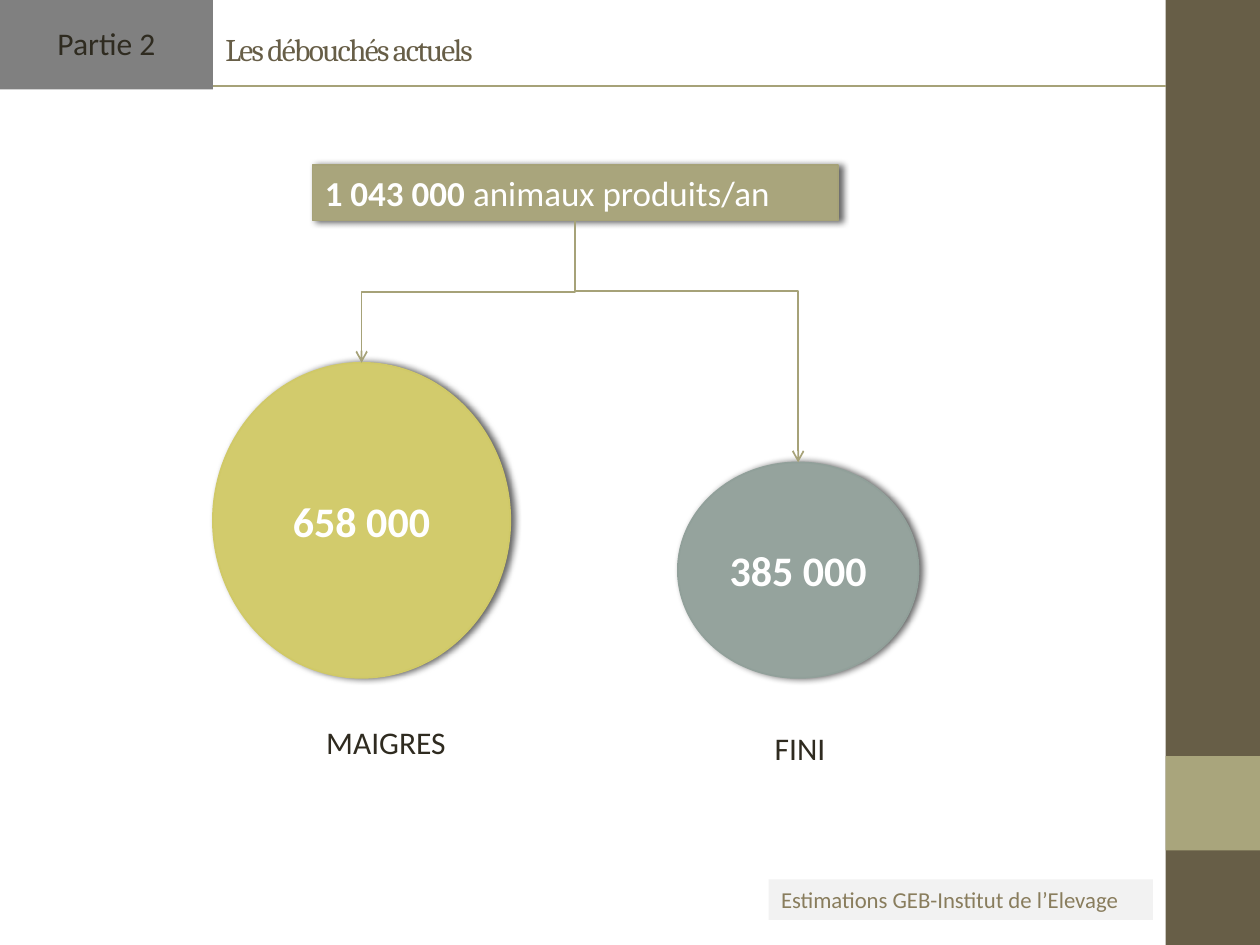
from lxml.etree import SubElement
from pptx import Presentation
from pptx.dml.color import RGBColor
from pptx.enum.shapes import MSO_CONNECTOR as LINK, MSO_SHAPE as SHAPE
from pptx.enum.text import MSO_ANCHOR as ANCHOR, PP_ALIGN as ALIGN
from pptx.oxml.ns import qn
from pptx.util import Inches, Pt

COLORS = {
    "brown": "675E47", "khaki": "A9A57C", "outline": "A6A278",
    "pale": "F2F2F2", "tan": "897D5D", "gray": "808080", "ink": "2F2B20",
    "yellow": "D2CB6C", "yellow_edge": "D0C967",
    "sage": "95A39D", "sage_edge": "91A09A",
    "white": "FFFFFF", "black": "000000",
}


def rgb(name):
    return RGBColor.from_string(COLORS[name])


def write(shape, *runs, size=18, color="ink", font="Calibri", bold=(),
          align=ALIGN.LEFT, anchor=ANCHOR.TOP, wrap=True, spacing=None):
    frame = shape.text_frame
    frame.word_wrap = wrap
    frame.vertical_anchor = anchor
    paragraph = frame.paragraphs[0]
    paragraph.alignment = align
    for text in runs:
        run = paragraph.add_run()
        run.text = text
        run.font.size = Pt(size)
        run.font.name = font
        run.font.bold = text in bold
        run.font.color.rgb = rgb(color)
        if spacing is not None:
            run.font._element.set("spc", str(spacing * 100))


class Board:
    def __init__(self, slide, line_color="outline", line_width=1):
        self.shapes = slide.shapes
        self.line_color = line_color
        self.line_width = Pt(line_width)

    def block(self, x, y, w, h, fill, edge=None, kind=SHAPE.RECTANGLE):
        shape = self.shapes.add_shape(
            kind, Inches(x), Inches(y), Inches(w), Inches(h))
        shape.fill.solid()
        shape.fill.fore_color.rgb = rgb(fill)
        shape.shadow.inherit = False
        if edge:
            shape.line.color.rgb = rgb(edge)
            shape.line.width = self.line_width
            self.cast_shadow(shape)
        else:
            shape.line.fill.background()
        return shape

    def cast_shadow(self, shape):
        effects = shape._element.spPr.find(qn("a:effectLst"))
        shadow = SubElement(effects, qn("a:outerShdw"), blurRad=str(Pt(4)),
                            dist=str(Pt(2)), dir="0", rotWithShape="0")
        tint = SubElement(shadow, qn("a:srgbClr"), val=COLORS["black"])
        SubElement(tint, qn("a:alpha"), val="60000")

    def label(self, x, y, w, h, text, **style):
        box = self.shapes.add_textbox(
            Inches(x), Inches(y), Inches(w), Inches(h))
        write(box, text, **style)

    def line(self, x1, y1, x2, y2, kind=LINK.STRAIGHT):
        link = self.shapes.add_connector(
            kind, Inches(x1), Inches(y1), Inches(x2), Inches(y2))
        link.line.color.rgb = rgb(self.line_color)
        link.line.width = self.line_width
        SubElement(link._element.spPr, qn("a:effectLst"))
        return link

    def branch(self, source, target, bend):
        link = self.line(0, 0, 1, 1, LINK.ELBOW)
        link.begin_connect(source, 2)
        link.end_connect(target, 0)
        x1, y1 = source.left + source.width // 2, source.top + source.height
        x2, y2 = target.left + target.width // 2, target.top
        link.width, link.height = y2 - y1, abs(x2 - x1)
        link.left = (x1 + x2 - link.width) // 2
        link.top = (y1 + y2 - link.height) // 2
        properties = link._element.spPr
        frame = properties.find(qn("a:xfrm"))
        rightward = x2 > x1
        frame.set("rot", "16200000" if rightward else "5400000")
        frame.set("flipH", "1" if rightward else "0")
        frame.set("flipV", "0")
        guides = properties.find(qn("a:prstGeom")).find(qn("a:avLst"))
        SubElement(guides, qn("a:gd"), name="adj1",
                   fmla=f"val {round(bend * 100000)}")
        SubElement(link.line._get_or_add_ln(), qn("a:tailEnd"), type="arrow")


def main():
    deck = Presentation()
    deck.slide_width, deck.slide_height = Inches(10), Inches(7.5)
    board = Board(deck.slides.add_slide(deck.slide_layouts[6]))

    board.block(9.25, 0, 0.75, 7.5, "brown")
    board.block(9.25, 6, 0.75, 0.75, "khaki")
    board.label(1.69, 0.13, 7.72, 0.51, "Les débouchés actuels",
                color="brown", font="Cambria", anchor=ANCHOR.MIDDLE, spacing=-1)
    credit = board.block(6.1, 6.98, 3.05, 0.32, "pale")
    write(credit, "Estimations GEB-Institut de l’Elevage", size=13, color="tan")
    board.line(0.28, 0.68, 9.25, 0.68)
    part = board.block(0, -0.03, 1.69, 0.74, "gray")
    write(part, "Partie 2", align=ALIGN.CENTER, anchor=ANCHOR.MIDDLE)

    total = board.block(2.48, 1.31, 4.17, 0.44, "khaki", "outline")
    write(total, "1 043 000 ", "animaux produits/an", size=20, color="white",
          bold=("1 043 000 ",))

    outlets = [
        ("658 000", (1.69, 2.88, 2.36, 2.5), "yellow", 0.5,
         "MAIGRES", (2.49, 5.69, 1.16, 0.4)),
        ("385 000", (5.38, 3.67, 1.91, 1.71), "sage", 0.29,
         "FINI", (6.05, 5.74, 0.61, 0.4)),
    ]
    for count, circle, fill, bend, outlet, place in outlets:
        disc = board.block(*circle, fill, f"{fill}_edge", SHAPE.OVAL)
        write(disc, count, size=24, color="white", bold=(count,),
              align=ALIGN.CENTER, anchor=ANCHOR.MIDDLE)
        board.branch(total, disc, bend)
        board.label(*place, outlet, wrap=False)

    deck.save("out.pptx")


if __name__ == "__main__":
    main()
